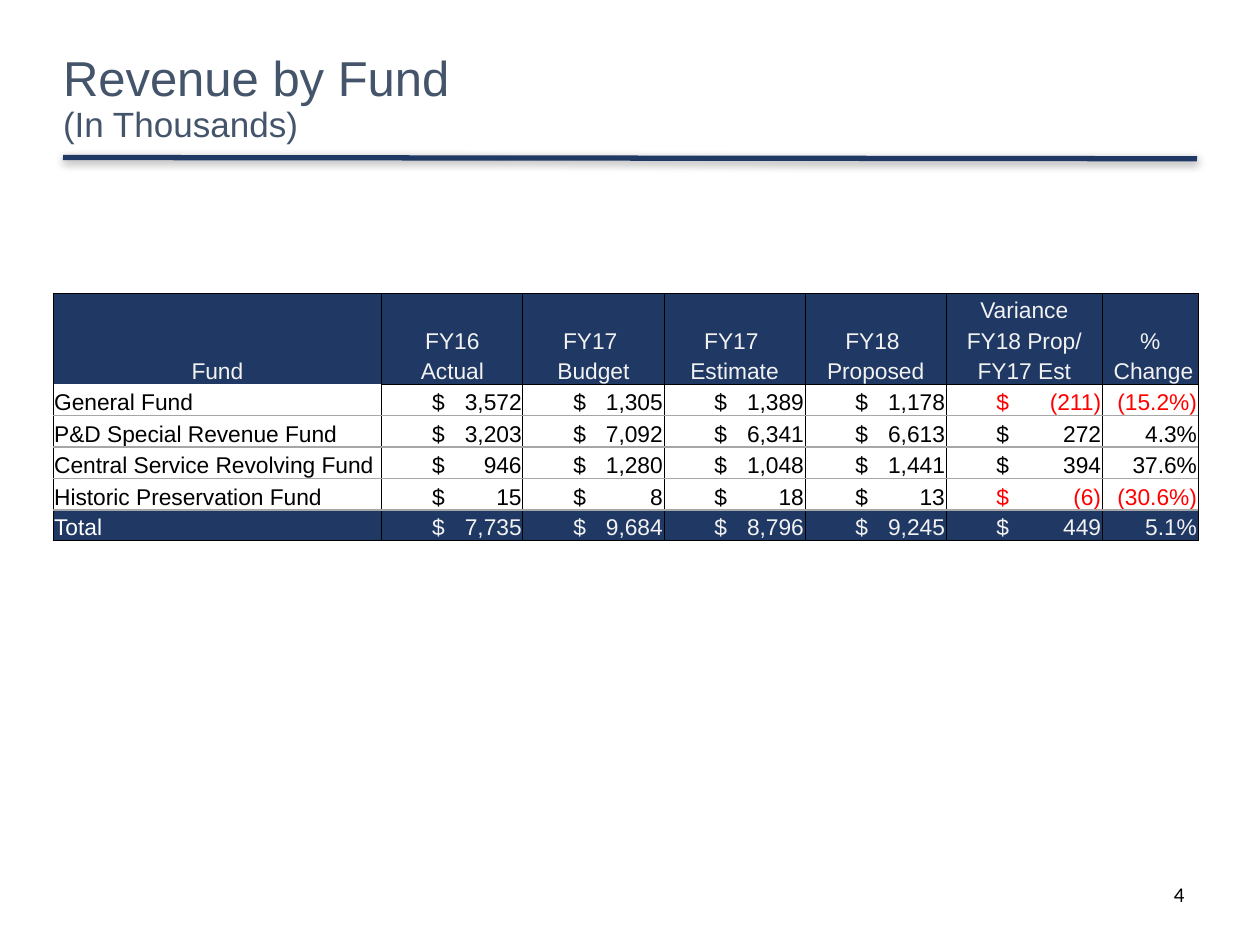
from lxml import etree
from pptx import Presentation
from pptx.dml.color import RGBColor
from pptx.enum import shapes, text
from pptx.oxml import parse_xml
from pptx.oxml.ns import nsdecls, qn
from pptx.util import Inches, Pt

NAVY, SLATE, GREY = "203864", "44546A", "A6A6A6"
BLACK, WHITE, PALE, RED = "000000", "FFFFFF", "F2F2F2", "FF0000"

HEADERS = [
    ["", "", "", "", "", "Variance", ""],
    ["Fund", "FY16", "FY17 ", "FY17 ", "FY18 ", "FY18 Prop/", "%"],
    ["", "Actual", "Budget", "Estimate", "Proposed", "FY17 Est", " Change"],
]
FUNDS = [
    ["General Fund", "3,572", "1,305", "1,389", "1,178", "(211)", "(15.2%)"],
    ["P&D Special Revenue Fund", "3,203", "7,092", "6,341", "6,613", "272", "4.3%"],
    ["Central Service Revolving Fund", "946", "1,280", "1,048", "1,441", "394", "37.6%"],
    ["Historic Preservation Fund", "15", "8", "18", "13", "(6)", "(30.6%)"],
    ["Total", "7,735", "9,684", "8,796", "9,245", "449", "5.1%"],
]
COLUMN_WIDTHS = [2.61, 1.12, 1.12, 1.12, 1.12, 1.24, 0.76]
HEADER_HEIGHT, FUND_HEIGHT = 0.24, 0.25
CELL_MARGIN, DOLLAR_INDENT = 0.01, 0.4
NAME, CHANGE = 0, len(COLUMN_WIDTHS) - 1
THIN, RULE, NONE = (BLACK, 0.5), (GREY, 1), None


def rgb(color):
    return RGBColor.from_string(color)


def style(run, size, color, font="Arial"):
    run.font.size, run.font.name = Pt(size), font
    run.font.color.rgb = rgb(color)


def set_borders(cell, top, bottom):
    properties = cell._tc.get_or_add_tcPr()
    for side, border in (("L", THIN), ("R", THIN), ("T", top), ("B", bottom)):
        line = etree.SubElement(properties, qn(f"a:ln{side}"))
        if border is NONE:
            etree.SubElement(line, qn("a:noFill"))
            continue
        color, width = border
        line.set("w", str(Pt(width)))
        fill = etree.SubElement(line, qn("a:solidFill"))
        etree.SubElement(fill, qn("a:srgbClr")).set("val", color)


def fill_cell(cell, words, align, color, fill, top, bottom):
    set_borders(cell, top, bottom)
    cell.fill.solid()
    cell.fill.fore_color.rgb = rgb(fill)
    cell.vertical_anchor = text.MSO_ANCHOR.BOTTOM
    cell.margin_left = cell.margin_right = cell.margin_top = Inches(CELL_MARGIN)
    cell.margin_bottom = 0
    paragraph = cell.text_frame.paragraphs[0]
    paragraph.text, paragraph.alignment = words, align
    paragraph._p.get_or_add_endParaRPr().set("sz", "1300")
    for run in paragraph.runs:
        style(run, 13, color)


def spread_dollar(cell, width):
    """Put the dollar sign at a fixed indent and the amount at the right edge."""
    cell.margin_left = Inches(DOLLAR_INDENT)
    stop = Inches(width - DOLLAR_INDENT - CELL_MARGIN)
    properties = cell.text_frame.paragraphs[0]._p.get_or_add_pPr()
    tabs = etree.SubElement(properties, qn("a:tabLst"))
    etree.SubElement(tabs, qn("a:tab"), pos=str(stop), algn="r")


def add_title(slide):
    title = slide.shapes.title
    title.left, title.top = Inches(0.5), Inches(0.33)
    title.width, title.height = Inches(6.86), Inches(0.92)
    frame = title.text_frame
    frame.text = "Revenue by Fund\v(In Thousands)"
    frame.auto_size = text.MSO_AUTO_SIZE.NONE
    frame.vertical_anchor = text.MSO_ANCHOR.MIDDLE
    frame.margin_left = frame.margin_right = frame.margin_top = frame.margin_bottom = 0
    heading = frame.paragraphs[0]
    heading.alignment, heading.line_spacing = text.PP_ALIGN.LEFT, 0.9
    for run, size in zip(heading.runs, (28, 20)):
        style(run, size, SLATE)


def add_title_rule(slide):
    rule = slide.shapes.add_connector(
        shapes.MSO_CONNECTOR.STRAIGHT, Inches(0.5), Inches(1.25), Inches(9.5), Inches(1.26))
    rule.line.color.rgb, rule.line.width = rgb(NAVY), Pt(3)
    rule._element.spPr.append(parse_xml(
        f'<a:effectLst {nsdecls("a")}><a:outerShdw blurRad="{Pt(5)}" dist="{Pt(1.6)}" '
        f'dir="5400000"><a:srgbClr val="{BLACK}"><a:alpha val="38000"/></a:srgbClr>'
        '</a:outerShdw></a:effectLst>'))


def add_fund_table(slide):
    rows = HEADERS + FUNDS
    heights = ([HEADER_HEIGHT] * len(HEADERS) + [FUND_HEIGHT] * (len(FUNDS) - 1)
               + [HEADER_HEIGHT])
    table = slide.shapes.add_table(
        len(rows), len(COLUMN_WIDTHS), Inches(0.42), Inches(2.33),
        Inches(sum(COLUMN_WIDTHS)), Inches(sum(heights))).table
    table.first_row = table.horz_banding = False
    for column, width in zip(table.columns, COLUMN_WIDTHS):
        column.width = Inches(width)
    for row, height in zip(table.rows, heights):
        row.height = Inches(height)

    last_header, total = len(HEADERS) - 1, len(rows) - 1
    for r, row in enumerate(rows):
        for c, words in enumerate(row):
            cell = table.cell(r, c)
            if r <= last_header:
                fill_cell(cell, words, text.PP_ALIGN.CENTER, PALE, NAVY,
                          THIN if r == 0 else NONE, THIN if r == last_header else NONE)
                continue
            is_amount = NAME < c < CHANGE
            if r == total:
                color, fill = (WHITE if c == NAME else PALE), NAVY
            else:
                color, fill = (RED if words.startswith("(") else BLACK), WHITE
            fill_cell(cell, f"$\t{words}" if is_amount else words,
                      text.PP_ALIGN.RIGHT if c == CHANGE else text.PP_ALIGN.LEFT, color, fill,
                      THIN if r == last_header + 1 else RULE, THIN if r == total else RULE)
            if is_amount:
                spread_dollar(cell, COLUMN_WIDTHS[c])
    table.cell(1, NAME).merge(table.cell(last_header, NAME))


def add_page_number(slide):
    frame = slide.shapes.add_textbox(
        Inches(7.17), Inches(6.95), Inches(2.33), Inches(0.4)).text_frame
    frame.word_wrap = True
    frame.text = "4"
    number = frame.paragraphs[0]
    number.alignment = text.PP_ALIGN.RIGHT
    style(number.runs[0], 12, BLACK, "Calibri")


def main():
    deck = Presentation()
    deck.slide_width, deck.slide_height = Inches(10), Inches(7.5)
    slide = deck.slides.add_slide(deck.slide_layouts.get_by_name("Title Only"))
    add_title_rule(slide)
    add_title(slide)
    add_page_number(slide)
    add_fund_table(slide)
    deck.save("out.pptx")


if __name__ == "__main__":
    main()
